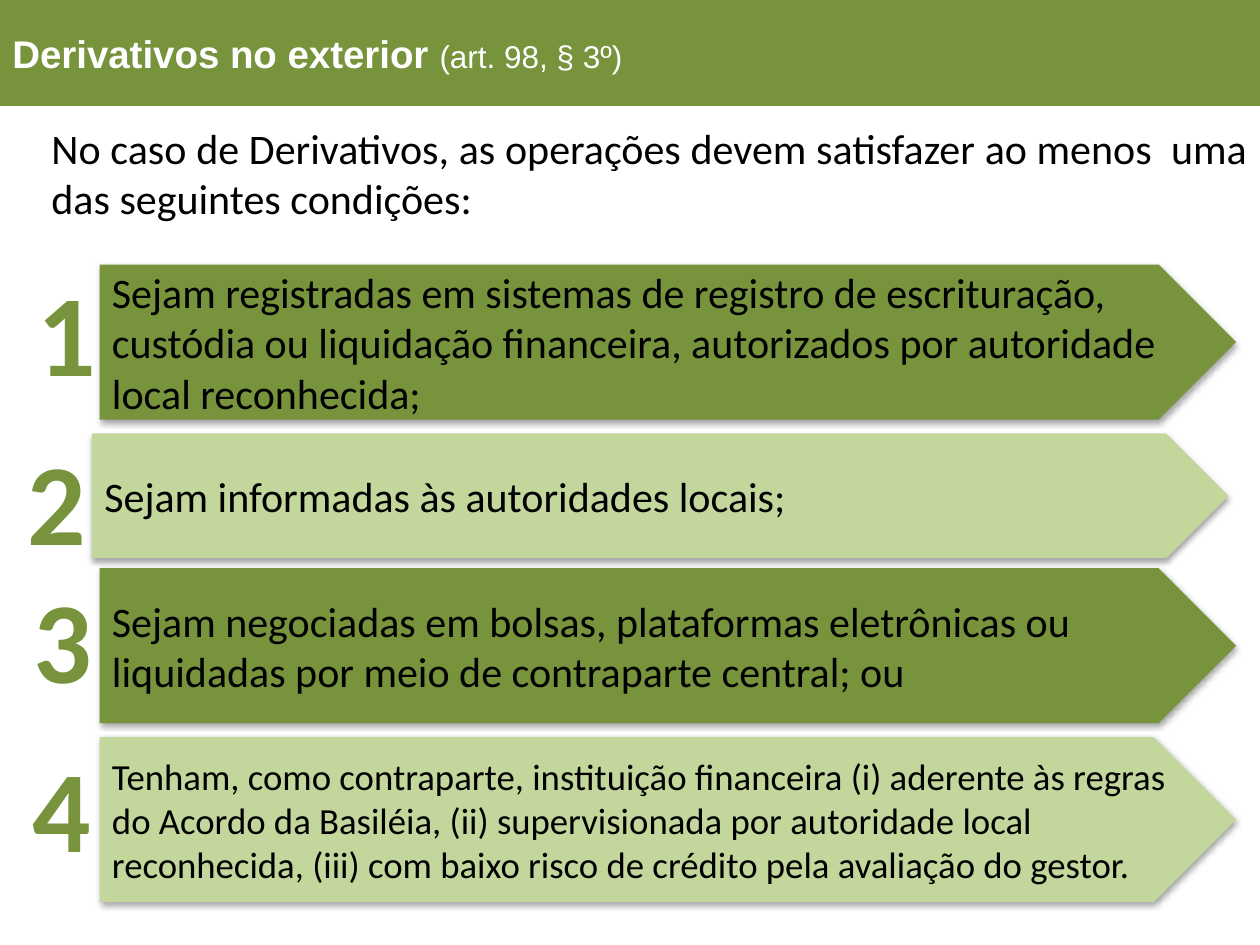
from dataclasses import dataclass

from lxml.etree import SubElement
from pptx import Presentation
from pptx.dml.color import RGBColor as RGB
from pptx.enum.shapes import MSO_SHAPE as Shape
from pptx.enum.text import MSO_ANCHOR as Anchor, PP_ALIGN as Align
from pptx.oxml.ns import qn
from pptx.util import Inches, Pt


@dataclass(frozen=True)
class Theme:
    dark: str = "77933C"
    light: str = "C3D69B"
    ink: str = "000000"
    paper: str = "FFFFFF"
    head_font: str = "Arial"
    body_font: str = "Calibri"
    title: int = 22
    note: int = 18
    body: int = 24
    small: int = 21
    number: int = 66


class Deck:
    """Draws themed elements on a slide gridded in 100 columns by 75 rows."""

    def __init__(self, prs, theme):
        self.theme = theme
        self.cell = prs.slide_width / 100
        self.s = prs.slides.add_slide(prs.slide_layouts[6])

    def box(self, *grid):
        return [round(n * self.cell) for n in grid]

    def fill_text(self, sp, runs, wrap=True, anchor=Anchor.TOP, **para):
        tf = sp.text_frame
        for key, value in dict(word_wrap=wrap, vertical_anchor=anchor).items():
            setattr(tf, key, value)
        p = tf.paragraphs[0]
        for key, value in (dict(alignment=Align.LEFT) | para).items():
            setattr(p, key, value)
        for text, size, color, font, bold in runs:
            r = p.add_run()
            r.text = text
            for key, value in dict(size=Pt(size), name=font, bold=bold).items():
                setattr(r.font, key, value)
            r.font.color.rgb = RGB.from_string(color)

    def shape(self, kind, grid, fill):
        sp = self.s.shapes.add_shape(kind, *self.box(*grid))
        sp.fill.solid()
        sp.fill.fore_color.rgb = RGB.from_string(fill)
        sp.line.fill.background()
        sp.shadow.inherit = False
        return sp

    def header(self, title, note):
        t = self.theme
        sp = self.shape(Shape.RECTANGLE, (0, 0, 100, 8.4), t.dark)
        self.fill_text(sp, [(title, t.title, t.paper, t.head_font, True),
                            (note, t.note, t.paper, t.head_font, False)],
                       anchor=Anchor.MIDDLE, space_after=Pt(2))

    def text(self, grid, text, size, color, bold=False, wrap=True, **para):
        sp = self.s.shapes.add_textbox(*self.box(*grid))
        self.fill_text(sp, [(text, size, color, self.theme.body_font, bold)],
                       wrap, **para)

    def arrow(self, grid, text, size, fill):
        t = self.theme
        sp = self.shape(Shape.PENTAGON, grid, fill)
        self.shade(sp)
        self.fill_text(sp, [(text, size, t.ink, t.body_font, False)],
                       anchor=Anchor.MIDDLE)

    def shade(self, sp):
        effects = sp._element.spPr.find(qn("a:effectLst"))
        shadow = SubElement(effects, qn("a:outerShdw"), blurRad=str(Pt(3.1)),
                            dist=str(Pt(1.8)), dir="5400000", rotWithShape="0")
        color = SubElement(shadow, qn("a:srgbClr"), val=self.theme.ink)
        SubElement(color, qn("a:alpha"), val="35000")

    def condition(self, number, text, size, fill, arrow, label):
        self.arrow(arrow, text, size, fill)
        self.text((*label, 6.7, 12.1), str(number), self.theme.number,
                  self.theme.dark, bold=True, wrap=False)


def main():
    prs = Presentation()
    prs.slide_width, prs.slide_height = Inches(10), Inches(7.5)
    t = Theme()
    deck = Deck(prs, t)
    deck.text((3.1, 9.2, 96.9, 9.1),
              "No caso de Derivativos, as operações devem satisfazer ao menos  uma "
              "das seguintes condições:", t.body, t.ink, alignment=Align.JUSTIFY)
    deck.header("Derivativos no exterior ", "(art. 98, § 3º)")
    conditions = [
        ("Sejam registradas em sistemas de registro de escrituração, custódia ou "
         "liquidação financeira, autorizados por autoridade local reconhecida;",
         t.body, t.dark, (7.9, 21, 90.2, 12.3), (2, 20.2)),
        ("Sejam informadas às autoridades locais;",
         t.body, t.light, (7.3, 34.4, 90.2, 9.9), (1.2, 33.6)),
        ("Sejam negociadas em bolsas, plataformas eletrônicas ou liquidadas por "
         "meio de contraparte central; ou",
         t.body, t.dark, (7.9, 45.1, 90.2, 12.3), (1.7, 44.6)),
        ("Tenham, como contraparte, instituição financeira (i) aderente às regras "
         "do Acordo da Basiléia, (ii) supervisionada por autoridade local "
         "reconhecida, (iii) com baixo risco de crédito pela avaliação do gestor.",
         t.small, t.light, (7.9, 58.5, 90.2, 13.1), (1.6, 58)),
    ]
    for number, condition in enumerate(conditions, 1):
        deck.condition(number, *condition)
    prs.save("out.pptx")


if __name__ == "__main__":
    main()
